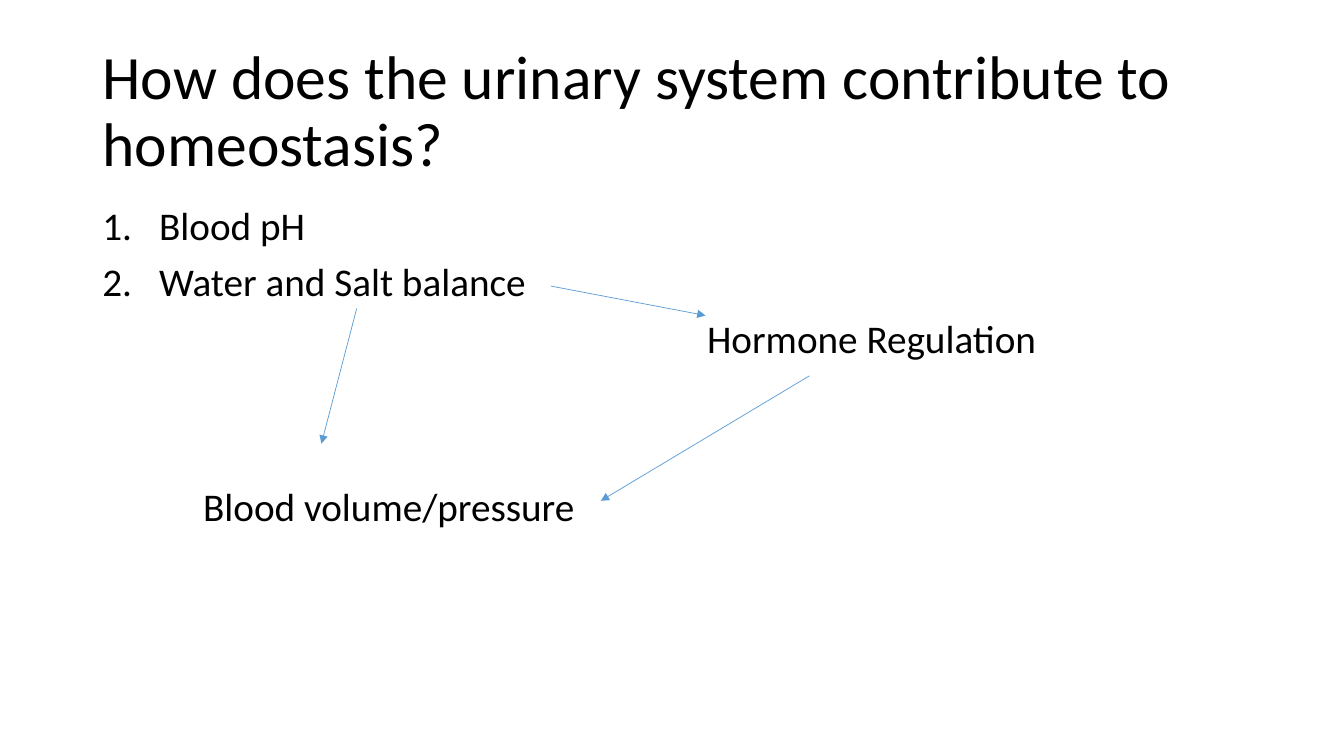
from dataclasses import dataclass

from lxml.etree import SubElement
from pptx import Presentation
from pptx.dml.color import RGBColor
from pptx.enum.shapes import MSO_CONNECTOR as Connector
from pptx.enum.text import MSO_ANCHOR as Anchor, MSO_AUTO_SIZE as AutoSize, PP_ALIGN as Align
from pptx.oxml.ns import qn
from pptx.util import Cm, Pt


@dataclass(frozen=True)
class Theme:
    font: str = "Calibri"
    ink: RGBColor = RGBColor(0x00, 0x00, 0x00)
    arrow: RGBColor = RGBColor(0x5B, 0x9B, 0xD5)
    title_size: int = 44
    body_size: int = 28
    arrow_width: float = 0.5
    line_spacing: float = 0.9
    space_before: int = 10


THEME = Theme()
TAB = 2.54
ROW_PITCH = 40
NUMBER_INDENT = 1.43

QUESTION = "How does the urinary system contribute to homeostasis?"
TITLE_AREA = (2.33, 1.01, 29.21, 3.68)
BODY_AREA = (2.33, 5.08, 29.21, 12.09)

STATEMENTS = [
    {"text": "Blood pH", "numbered": True, "tabs": 0, "rows_skipped": 0},
    {"text": "Water and Salt balance", "numbered": True, "tabs": 0, "rows_skipped": 0},
    {"text": "Hormone Regulation", "numbered": False, "tabs": 6, "rows_skipped": 0},
    {"text": "Blood volume/pressure", "numbered": False, "tabs": 1, "rows_skipped": 2},
]

INFLUENCES = [
    ((8.99, 7.77), (8.1, 11.18)),
    ((13.89, 7.21), (17.78, 7.95)),
    ((20.4, 9.47), (15.14, 12.62)),
]


def add_words(paragraph, words, size):
    paragraph.alignment = Align.LEFT
    paragraph.line_spacing = THEME.line_spacing
    run = paragraph.add_run()
    run.text = words
    run.font.name = THEME.font
    run.font.size = Pt(size)
    run.font.color.rgb = THEME.ink


def add_title(slide):
    title = slide.shapes.title
    title.left, title.top, title.width, title.height = map(Cm, TITLE_AREA)
    frame = title.text_frame
    frame.auto_size = AutoSize.NONE
    frame.vertical_anchor = Anchor.MIDDLE
    add_words(frame.paragraphs[0], QUESTION, THEME.title_size)


def add_statements(slide):
    frame = slide.shapes.add_textbox(*map(Cm, BODY_AREA)).text_frame
    frame.word_wrap = True
    for index, statement in enumerate(STATEMENTS):
        paragraph = frame.add_paragraph() if index else frame.paragraphs[0]
        add_words(paragraph, statement["text"], THEME.body_size)
        if index:
            paragraph.space_before = Pt(THEME.space_before + statement["rows_skipped"] * ROW_PITCH)
        properties = paragraph._p.get_or_add_pPr()
        if statement["numbered"]:
            properties.set("marL", str(Cm(NUMBER_INDENT)))
            properties.set("indent", str(-Cm(NUMBER_INDENT)))
            SubElement(properties, qn("a:buFont"), typeface="+mj-lt")
            SubElement(properties, qn("a:buAutoNum"), type="arabicPeriod")
        else:
            properties.set("marL", str(Cm(statement["tabs"] * TAB)))
            properties.set("indent", "0")


def add_influence(slide, start, end):
    arrow = slide.shapes.add_connector(Connector.STRAIGHT, *map(Cm, start + end))
    arrow.line.color.rgb = THEME.arrow
    arrow.line.width = Pt(THEME.arrow_width)
    SubElement(arrow.line._get_or_add_ln(), qn("a:tailEnd"), type="triangle")
    SubElement(arrow._element.spPr, qn("a:effectLst"))


def main():
    deck = Presentation()
    deck.slide_width, deck.slide_height = Cm(33.87), Cm(19.05)
    slide = deck.slides.add_slide(deck.slide_layouts.get_by_name("Title Only"))
    add_title(slide)
    add_statements(slide)
    for start, end in INFLUENCES:
        add_influence(slide, start, end)
    deck.save("out.pptx")


if __name__ == "__main__":
    main()
